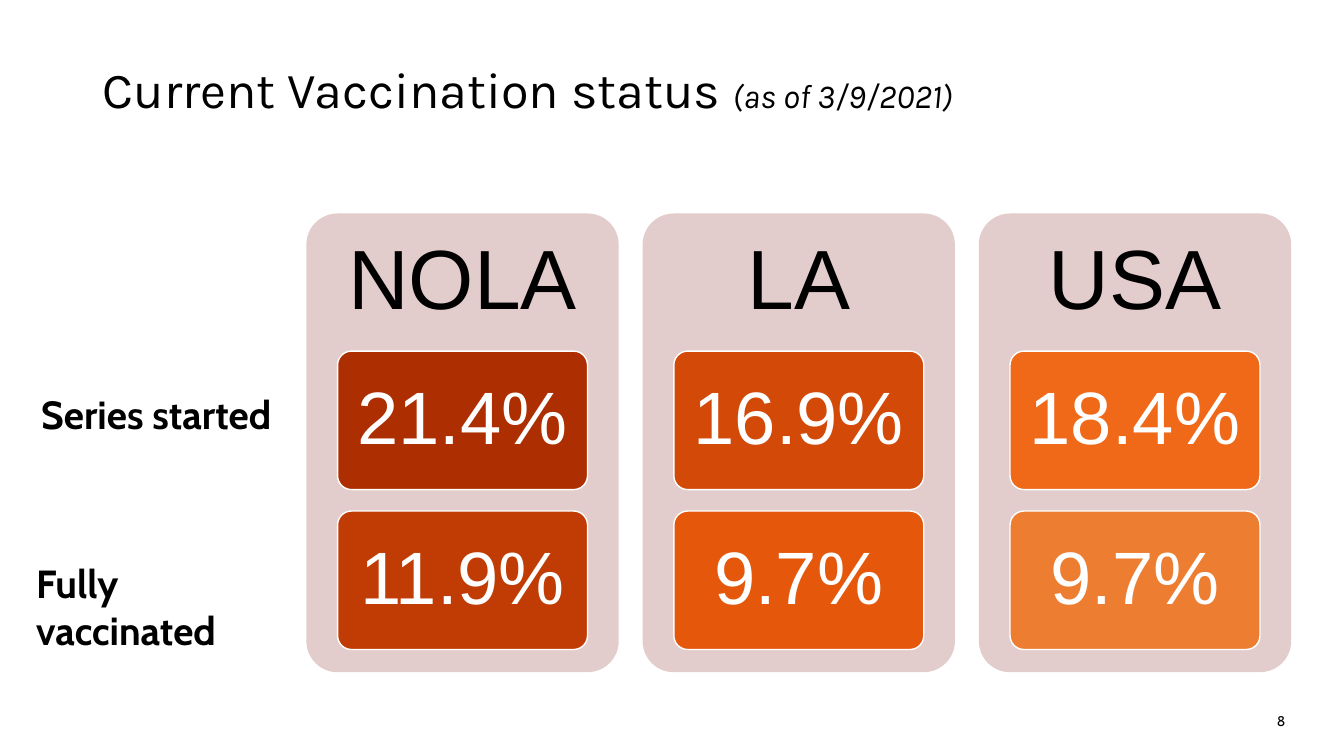
from pptx import Presentation
from pptx.dml.color import RGBColor
from pptx.enum.shapes import MSO_SHAPE as Shape
from pptx.enum.text import MSO_ANCHOR as Anchor, PP_ALIGN as Align
from pptx.util import Cm, Pt

BLACK, WHITE, CARD_PINK = "000000", "FFFFFF", "E3CDCC"

# Region, then (share, fill) for series started and fully vaccinated
REGIONS = [
    ("NOLA", [("21.4%", "AD2F01"), ("11.9%", "C03C04")]),
    ("LA", [("16.9%", "D34908"), ("9.7%", "E5580C")]),
    ("USA", [("18.4%", "EF6919"), ("9.7%", "ED7D31")]),
]


def color(hex_code):
    return RGBColor.from_string(hex_code)


def write(frame, runs, font, ink=BLACK, align=Align.LEFT, anchor=Anchor.MIDDLE,
          inset=(0.25, 0.13), spacing=None):
    """Fill a frame with one paragraph of (text, size, bold, italic) runs."""
    frame.word_wrap = True
    frame.vertical_anchor = anchor
    frame.margin_left = frame.margin_right = Cm(inset[0])
    frame.margin_top = frame.margin_bottom = Cm(inset[1])
    paragraph = frame.paragraphs[0]
    paragraph.alignment = align
    if spacing:
        paragraph.line_spacing = spacing
    for text, size, bold, italic in runs:
        run = paragraph.add_run()
        run.text = text
        run.font.name = font
        run.font.size = Pt(size)
        run.font.bold = bold
        run.font.italic = italic
        run.font.color.rgb = color(ink)


def add_label(slide, box, runs, font, **style):
    label = slide.shapes.add_textbox(*map(Cm, box))
    write(label.text_frame, runs, font, **style)


def add_panel(slide, box, fill, outline=None):
    panel = slide.shapes.add_shape(Shape.ROUNDED_RECTANGLE, *map(Cm, box))
    panel.adjustments[0] = 0.1
    panel.shadow.inherit = False
    panel.fill.solid()
    panel.fill.fore_color.rgb = color(fill)
    if outline:
        panel.line.color.rgb = color(outline)
        panel.line.width = Pt(1)
    else:
        panel.line.fill.background()
    return panel


def add_region_card(slide, box, region, shares):
    left, top, width, height = box
    add_panel(slide, box, CARD_PINK)

    # Region name in the top 30 % of the card
    header_height = 0.3 * height
    add_label(slide, (left, top, width, header_height),
              [(region, 60, False, False)], "Arial",
              align=Align.CENTER, inset=(0.64, 0.64), spacing=0.9)

    # Stacked shares, inset by 10 % of the card width on each side
    share_height, share_pitch = 3.49, 4.03
    for row, (share, fill) in enumerate(shares):
        share_box = (left + 0.1 * width, top + header_height + row * share_pitch,
                     0.8 * width, share_height)
        panel = add_panel(slide, share_box, fill, WHITE)
        write(panel.text_frame, [(share, 53, False, False)], "Arial", ink=WHITE,
              align=Align.CENTER, inset=(0.2, 0.2), spacing=0.9)


def add_region_cards(slide, box):
    left, top, width, height = box
    gap = 0.6
    card_width = (width - gap * (len(REGIONS) - 1)) / len(REGIONS)
    for column, (region, shares) in enumerate(REGIONS):
        card_left = left + column * (card_width + gap)
        add_region_card(slide, (card_left, top, card_width, height), region, shares)


def add_row_labels(slide, box):
    left, top, width, height = box
    for text, shift, drop in [("Series started", 0.13, 0), ("Fully vaccinated", 0, 4.27)]:
        add_label(slide, (left + shift, top + drop, width, height),
                  [(text, 28, True, False)], "Cabin", anchor=Anchor.TOP)


def main():
    deck = Presentation()
    deck.slide_width, deck.slide_height = Cm(33.87), Cm(19.05)
    slide = deck.slides.add_slide(deck.slide_layouts[6])

    # Title and page number
    add_label(slide, (2.34, 1.02, 29.21, 2.39),
              [("Current Vaccination status ", 36, False, False),
               ("(as of 3/9/2021)", 24, False, True)], "Karla")
    add_label(slide, (23.93, 17.65, 8.71, 1.02),
              [("8", 10, False, False)], "Cabin", align=Align.RIGHT)

    # Vaccination shares by region
    add_region_cards(slide, (7.72, 5.38, 24.82, 11.56))
    add_row_labels(slide, (0.66, 9.7, 6.95, 1.45))

    deck.save("out.pptx")


if __name__ == "__main__":
    main()
